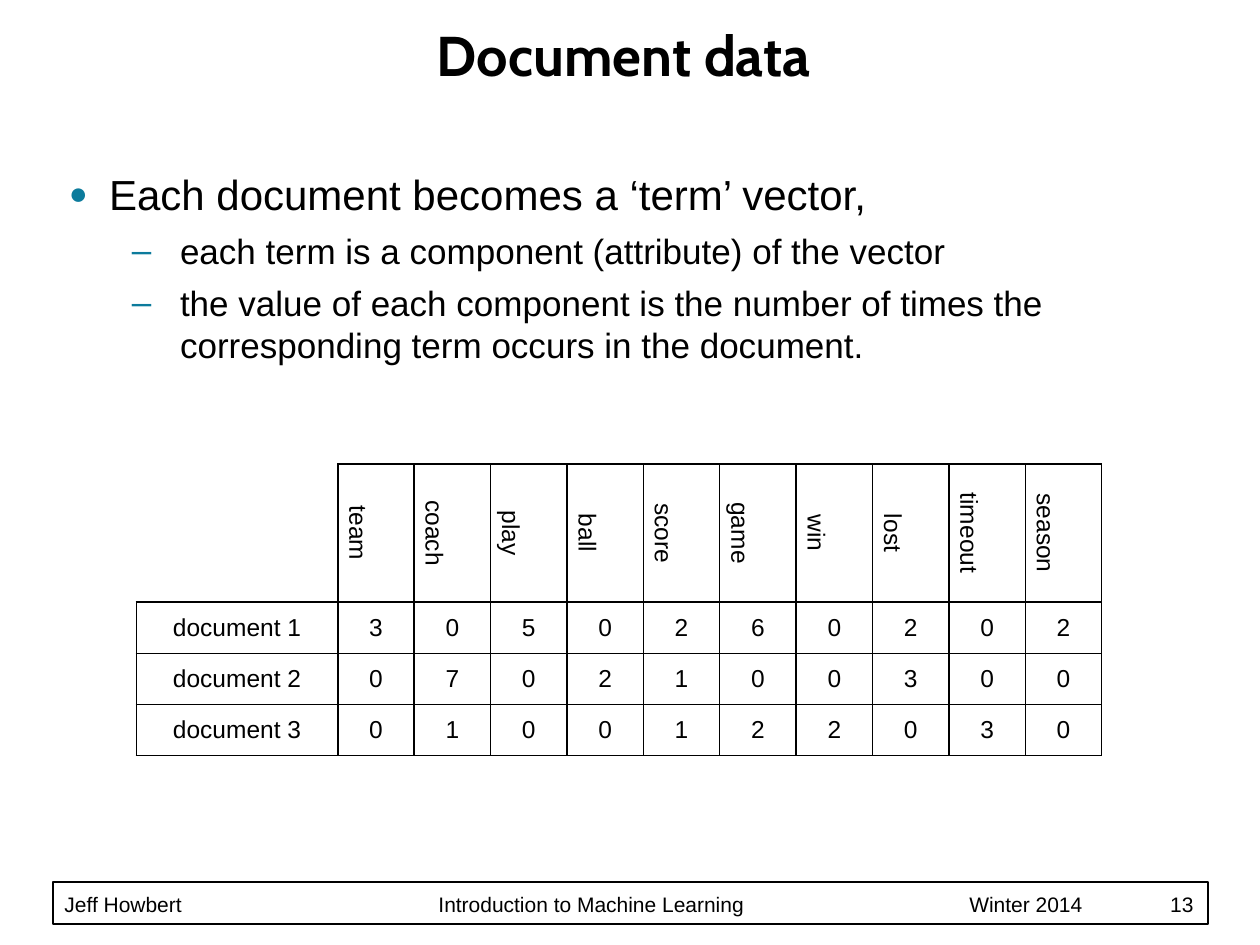
import pptx
import pptx.dml.color
import pptx.enum.shapes
import pptx.enum.text
import pptx.oxml
import pptx.oxml.ns
import pptx.util
from dataclasses import dataclass
from lxml import etree
from pptx.util import Cm, Pt


@dataclass(frozen=True)
class Theme:
    black = pptx.dml.color.RGBColor(0, 0, 0)
    white = pptx.dml.color.RGBColor(255, 255, 255)
    accent = "0C7B9C"
    heading_font = "Cabin"
    body_font = "Arial"
    title_size = Pt(32)
    level_sizes = (Pt(24), Pt(20))
    table_size = Pt(14)
    footer_size = Pt(12)
    line_width = Pt(1)


theme = Theme()
qn = pptx.oxml.ns.qn
PP_ALIGN = pptx.enum.text.PP_ALIGN
MSO_ANCHOR = pptx.enum.text.MSO_ANCHOR


def style_font(paragraph, size, name=theme.body_font, bold=False):
    paragraph.font.size = size
    paragraph.font.name = name
    paragraph.font.bold = bold
    paragraph.font.color.rgb = theme.black


def add_text_frame(left, top, width, height, anchor):
    frame = slide.shapes.add_textbox(Cm(left), Cm(top), Cm(width), Cm(height)).text_frame
    frame.word_wrap = True
    frame.vertical_anchor = anchor
    return frame


presentation = pptx.Presentation()
presentation.slide_width = Cm(25.4)
presentation.slide_height = Cm(19.05)
slide = presentation.slides.add_slide(presentation.slide_layouts[6])

# Footer
footer_box = slide.shapes.add_shape(
    pptx.enum.shapes.MSO_SHAPE.RECTANGLE, Cm(1.07), Cm(17.78), Cm(23.28), Cm(0.85))
footer_box.shadow.inherit = False
footer_box.fill.solid()
footer_box.fill.fore_color.rgb = theme.white
footer_box.line.color.rgb = theme.black
footer_box.line.width = theme.line_width

footer = add_text_frame(1.07, 17.78, 23.24, 0.71, MSO_ANCHOR.BOTTOM)
footer.margin_left = Cm(0.23)
footer.margin_top = footer.margin_right = footer.margin_bottom = 0
paragraph = footer.paragraphs[0]
paragraph.text = "Jeff Howbert\tIntroduction to Machine Learning\tWinter 2014\t13"
paragraph.line_spacing = Pt(20)
tabs = etree.SubElement(paragraph._p.get_or_add_pPr(), qn("a:tabLst"))
for position, alignment in ((7.54, "l"), (18.24, "l"), (22.76, "r")):
    etree.SubElement(tabs, qn("a:tab"), pos=str(Cm(position)), algn=alignment)
style_font(paragraph, theme.footer_size)

# Bullets
body = add_text_frame(1.14, 3.18, 23.11, 14.4, MSO_ANCHOR.TOP)
body.margin_top = Cm(0.21)
bullets = [
    (0, "Each document becomes a ‘term’ vector,"),
    (1, "each term is a component (attribute) of the vector"),
    (1, "the value of each component is the number of times the "
        "corresponding term occurs in the document."),
]
level_bullets = [  # left margin, hanging indent, size percentage, character
    (0.81, 0.81, 75, "●"),
    (2.24, 0.97, 100, "–"),
]
for index, (level, text) in enumerate(bullets):
    paragraph = body.paragraphs[0] if index == 0 else body.add_paragraph()
    paragraph.text = text
    paragraph.level = level
    paragraph.space_after = Pt(4)
    if index:
        paragraph.space_before = Pt(2)
    margin, hanging, percentage, character = level_bullets[level]
    properties = paragraph._p.get_or_add_pPr()
    properties.set("marL", str(Cm(margin)))
    properties.set("indent", str(-Cm(hanging)))
    color = etree.SubElement(properties, qn("a:buClr"))
    etree.SubElement(color, qn("a:srgbClr"), val=theme.accent)
    etree.SubElement(properties, qn("a:buSzPct"), val=str(percentage * 1000))
    etree.SubElement(properties, qn("a:buFont"), typeface=theme.body_font)
    etree.SubElement(properties, qn("a:buChar"), char=character)
    style_font(paragraph, theme.level_sizes[level])

# Title
title = add_text_frame(1.07, 0.43, 23.01, 1.47, MSO_ANCHOR.BOTTOM)
paragraph = title.paragraphs[0]
paragraph.text = "Document data"
paragraph.alignment = PP_ALIGN.CENTER
paragraph.line_spacing = Pt(36)
style_font(paragraph, theme.title_size, theme.heading_font, bold=True)

# Term counts
terms = ["team", "coach", "play", "ball", "score", "game", "win", "lost", "timeout", "season"]
counts = [
    [3, 0, 5, 0, 2, 6, 0, 2, 0, 2],
    [0, 7, 0, 2, 1, 0, 0, 3, 0, 0],
    [0, 1, 0, 0, 1, 2, 2, 0, 3, 0],
]
rows = [["", *terms]]
rows += [[f"document {number}", *values] for number, values in enumerate(counts, 1)]
column_widths = [Cm(4.06)] + [Cm(1.54)] * len(terms)
row_heights = [Cm(2.79)] + [Cm(1.03)] * len(counts)
table = slide.shapes.add_table(
    len(rows), len(column_widths), Cm(2.75), Cm(9.35),
    sum(column_widths), sum(row_heights)).table
table.first_row = False
table.horz_banding = False
for column, width in zip(table.columns, column_widths):
    column.width = width
for row, height in zip(table.rows, row_heights):
    row.height = height

for row_index, values in enumerate(rows):
    for column_index, value in enumerate(values):
        cell = table.cell(row_index, column_index)
        is_corner = row_index == column_index == 0
        cell.vertical_anchor = MSO_ANCHOR.MIDDLE
        properties = cell._tc.get_or_add_tcPr()
        if row_index == 0 and not is_corner:
            properties.set("vert", "vert")
        for side in ("L", "R", "T", "B"):
            border = etree.SubElement(properties, qn(f"a:ln{side}"), w=str(theme.line_width))
            if is_corner and side in "LT":
                etree.SubElement(border, qn("a:noFill"))
            else:
                fill = etree.SubElement(border, qn("a:solidFill"))
                etree.SubElement(fill, qn("a:srgbClr"), val=str(theme.black))
        cell.fill.background()
        paragraph = cell.text_frame.paragraphs[0]
        paragraph.text = str(value)
        paragraph.alignment = PP_ALIGN.CENTER
        style_font(paragraph, theme.table_size)

presentation.save("out.pptx")
